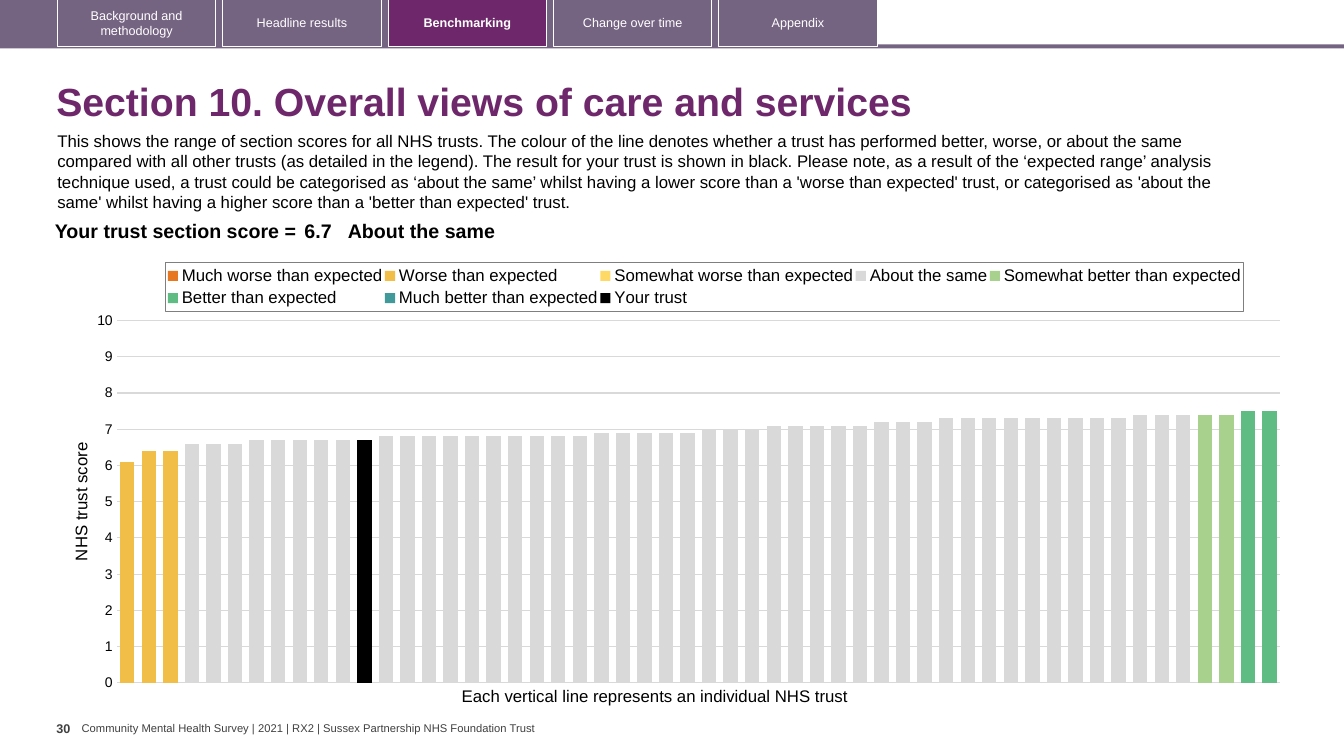
from copy import deepcopy
from dataclasses import dataclass

from lxml.etree import SubElement
from pptx import Presentation
from pptx.chart.data import CategoryChartData
from pptx.dml.color import RGBColor
from pptx.enum.chart import XL_CHART_TYPE as ChartType, XL_LEGEND_POSITION as LegendPosition
from pptx.enum.chart import XL_TICK_MARK as TickMark
from pptx.enum.shapes import MSO_SHAPE as ShapeKind
from pptx.enum.text import MSO_ANCHOR as Anchor, PP_ALIGN as Align
from pptx.oxml import parse_xml
from pptx.oxml.ns import nsdecls, qn
from pptx.util import Pt

EMU_PER_PX = 9144  # 100 px to the inch


@dataclass(frozen=True)
class Theme:
    font: str = "Arial"
    chart_font: str = "Calibri"
    purple: str = "6D276A"
    mauve: str = "756382"
    white: str = "FFFFFF"
    black: str = "000000"
    footer: str = "404040"
    grid: str = "D9D9D9"
    legend_line: str = "7F7F7F"
    title_size: int = 28
    score_size: int = 14
    body_size: int = 12
    axis_size: int = 10
    tab_size: int = 9
    footer_size: int = 8


def px(length):
    return length * EMU_PER_PX


def set_font(font, size, color, bold=False, name=Theme.font):
    font.name, font.size, font.bold = name, Pt(size), bold
    font.color.rgb = RGBColor.from_string(color)


def manual_layout(x, y, width, height, inner=False):
    layout = parse_xml(f"<c:layout {nsdecls('c')}/>")
    manual = SubElement(layout, qn("c:manualLayout"))
    settings = {"layoutTarget": "inner"} if inner else {}
    settings |= {"xMode": "edge", "yMode": "edge", "x": x, "y": y, "w": width, "h": height}
    for tag, value in settings.items():
        SubElement(manual, qn(f"c:{tag}")).set("val", str(value))
    return layout


class SlideBuilder:
    def __init__(self, slide, theme):
        self.slide, self.theme = slide, theme

    def set_text(self, frame, text, size, color, bold=False, align=None):
        frame.text = text
        paragraph = frame.paragraphs[0]
        paragraph.alignment = align
        set_font(paragraph.font, size, color, bold, self.theme.font)
        return paragraph

    def text(self, box, text, size, color, bold=False, wrap=True, anchor=Anchor.TOP,
             insets=(10, 5)):
        frame = self.slide.shapes.add_textbox(*map(px, box)).text_frame
        frame.word_wrap, frame.vertical_anchor = wrap, anchor
        frame.margin_left = frame.margin_right = px(insets[0])
        frame.margin_top = frame.margin_bottom = px(insets[1])
        return self.set_text(frame, text, size, color, bold)

    def rectangle(self, box, fill=None, line=None):
        shape = self.slide.shapes.add_shape(ShapeKind.RECTANGLE, *map(px, box))
        shape.shadow.inherit = False
        if fill:
            shape.fill.solid()
            shape.fill.fore_color.rgb = RGBColor.from_string(fill)
        else:
            shape.fill.background()
        if line:
            shape.line.color.rgb = RGBColor.from_string(line)
            shape.line.width = Pt(0.75)
        else:
            shape.line.fill.background()
        return shape

    def tab(self, box, label, active):
        theme = self.theme
        shape = self.rectangle(box, theme.purple if active else None, theme.white)
        frame = shape.text_frame
        frame.word_wrap, frame.vertical_anchor = True, Anchor.MIDDLE
        self.set_text(frame, label, theme.tab_size, theme.white, active, Align.CENTER)

    def score_row(self, box, columns):
        theme = self.theme
        table = self.slide.shapes.add_table(1, len(columns), *map(px, box)).table
        table.first_row = table.horz_banding = False
        for index, (width, text, align, side_inset) in enumerate(columns):
            table.columns[index].width = px(width)
            cell = table.cell(0, index)
            cell.fill.background()
            cell.margin_left = cell.margin_right = px(side_inset)
            cell.margin_top = cell.margin_bottom = px(4)
            self.set_text(cell.text_frame, text, theme.score_size, theme.black, True, align)

    def benchmark_chart(self, box, trust_count, bands):
        theme = self.theme
        data = CategoryChartData()
        data.categories = [str(number) for number in range(1, trust_count + 1)]
        for name, _, start, values in bands:
            after = trust_count - start - len(values)
            data.add_series(name, [None] * start + values + [None] * after)
        frame = self.slide.shapes.add_chart(ChartType.COLUMN_CLUSTERED, *map(px, box), data)
        chart = frame.chart
        set_font(chart.font, theme.axis_size, theme.black, name=theme.chart_font)
        chart.has_title = False
        plot = chart.plots[0]
        plot.gap_width, plot.overlap, plot.vary_by_categories = 50, 100, False
        for series, (_, color, _, _) in zip(plot.series, bands):
            series.format.fill.solid()
            series.format.fill.fore_color.rgb = RGBColor.from_string(color)
        self.style_axes(chart)
        self.style_legend(chart)
        area = chart.element.xpath("//c:plotArea")[0]
        for layout in area.findall(qn("c:layout")):
            area.remove(layout)
        area.insert(0, manual_layout(0.04, 0.16, 0.95, 0.81, inner=True))
        self.split_last_series(area)

    def style_axes(self, chart):
        theme = self.theme
        chart.category_axis.visible = False
        axis = chart.value_axis
        axis.minimum_scale, axis.maximum_scale, axis.major_unit = 0, 10, 1
        axis.major_tick_mark = axis.minor_tick_mark = TickMark.NONE
        axis.format.line.fill.background()
        grid_line = axis.major_gridlines.format.line
        grid_line.color.rgb = RGBColor.from_string(theme.grid)
        grid_line.width = Pt(0.75)
        set_font(axis.tick_labels.font, theme.axis_size, theme.black)
        self.set_text(axis.axis_title.text_frame, "NHS trust score", theme.body_size, theme.black)

    def style_legend(self, chart):
        theme = self.theme
        chart.has_legend = True
        legend = chart.legend
        legend.position, legend.include_in_layout = LegendPosition.TOP, False
        set_font(legend.font, theme.body_size, theme.black)
        element = chart.element.xpath("//c:legend")[0]
        for layout in element.findall(qn("c:layout")):
            element.remove(layout)
        element.find(qn("c:legendPos")).addnext(manual_layout(0.08, 0.03, 0.88, 0.11))
        element.find(qn("c:txPr")).addprevious(parse_xml(
            f'<c:spPr {nsdecls("c", "a")}><a:ln w="9525"><a:solidFill>'
            f'<a:srgbClr val="{theme.legend_line}"/></a:solidFill></a:ln></c:spPr>'))

    def split_last_series(self, area):
        """Move the last series to a hidden right-hand axis."""
        main_bars = area.find(qn("c:barChart"))
        right_bars = deepcopy(main_bars)
        main_bars.remove(main_bars.findall(qn("c:ser"))[-1])
        for series in right_bars.findall(qn("c:ser"))[:-1]:
            right_bars.remove(series)
        main_bars.addnext(right_bars)
        category, value = area.find(qn("c:catAx")), area.find(qn("c:valAx"))
        new_ids = {category.find(qn("c:axId")).get("val"): "5001",
                   value.find(qn("c:axId")).get("val"): "5002"}
        right_category, right_value = deepcopy(category), deepcopy(value)
        value.addnext(right_value)
        right_value.addnext(right_category)
        for tag in ("majorGridlines", "title"):
            right_value.remove(right_value.find(qn(f"c:{tag}")))
        for tag, setting in (("axPos", "r"), ("tickLblPos", "none"), ("crosses", "max")):
            for element in right_value.findall(qn(f"c:{tag}")):
                element.set("val", setting)
        for part in (right_bars, right_category, right_value):
            for reference in part.findall(qn("c:axId")) + part.findall(qn("c:crossAx")):
                reference.set("val", new_ids[reference.get("val")])


TABS = ["Background and methodology", "Headline results", "Benchmarking", "Change over time",
        "Appendix"]
INTRODUCTION = (
    "This shows the range of section scores for all NHS trusts. The colour of the line denotes "
    "whether a trust has performed better, worse, or about the same compared with all other "
    "trusts (as detailed in the legend). The result for your trust is shown in black. Please "
    "note, as a result of the ‘expected range’ analysis technique used, a trust could be "
    "categorised as ‘about the same’ whilst having a lower score than a 'worse than expected' "
    "trust, or categorised as 'about the same' whilst having a higher score than a 'better than "
    "expected' trust.")
SAME_COUNTS = {6.6: 3, 6.7: 6, 6.8: 10, 6.9: 5, 7: 3, 7.1: 5, 7.2: 3, 7.3: 9, 7.4: 3}
SAME_SCORES = [score for score, count in SAME_COUNTS.items() for _ in range(count)]
# Name, colour, position of the first trust, scores
BANDS = [
    ("Much worse than expected", "E87722", 0, []),
    ("Worse than expected", "F1BE48", 0, [6.1, 6.4, 6.4]),
    ("Somewhat worse than expected", "FFD966", 0, []),
    ("About the same", "D9D9D9", 3, SAME_SCORES),
    ("Somewhat better than expected", "A9D18E", 50, [7.4, 7.4]),
    ("Better than expected", "5FBD83", 52, [7.5, 7.5]),
    ("Much better than expected", "419999", 0, []),
    ("Your trust", "000000", 11, [6.7]),
]


def main():
    presentation = Presentation()
    presentation.slide_width, presentation.slide_height = px(1333), px(750)
    slide = presentation.slides.add_slide(presentation.slide_layouts[6])
    theme = Theme()
    builder = SlideBuilder(slide, theme)

    # Navigation tabs
    builder.rectangle((0, 44, 1333, 4), theme.mauve)
    builder.rectangle((0, 0, 870, 47), theme.mauve)
    for index, label in enumerate(TABS):
        builder.tab((57 + 164 * index, -1, 157, 47), label, label == "Benchmarking")
    # Heading and introduction
    title = builder.text((46, 67, 1249, 72), "Section 10. Overall views of care and services",
                         theme.title_size, theme.purple, True, anchor=Anchor.MIDDLE)
    title.line_spacing = 0.9
    builder.text((47, 125, 1213, 91), INTRODUCTION, theme.body_size, theme.black)
    # Chart and score
    builder.benchmark_chart((67, 247, 1215, 444), 54, BANDS)
    builder.text((448, 675, 411, 30), "Each vertical line represents an individual NHS trust",
                 theme.body_size, theme.black, wrap=False)
    builder.score_row((35, 215, 1169, 22), [
        (263, "Your trust section score =", Align.RIGHT, 4),
        (47, "6.7", None, 4), (859, "About the same", None, 0)])
    # Footer
    builder.text((56, 710, 25, 40), "30", theme.tab_size, theme.footer, True, wrap=False,
                 insets=(0, 5))
    builder.text((81, 716, 456, 13), "Community Mental Health Survey | 2021 | RX2 | "
                 "Sussex Partnership NHS Foundation Trust", theme.footer_size, theme.footer,
                 wrap=False, anchor=Anchor.MIDDLE, insets=(0, 0))
    presentation.save("out.pptx")


if __name__ == "__main__":
    main()
